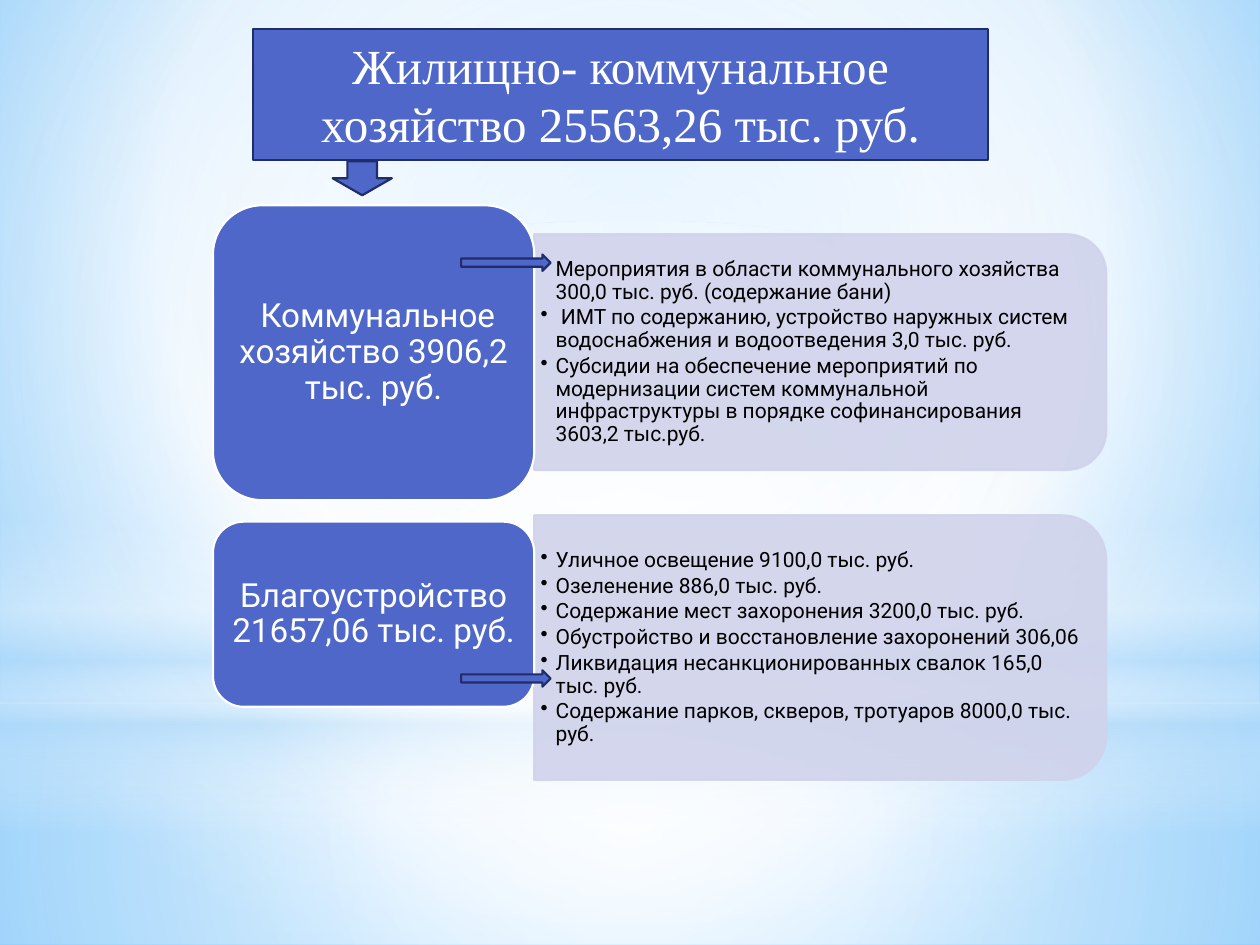
from dataclasses import dataclass

from pptx import Presentation
from pptx.dml.color import RGBColor
from pptx.enum.shapes import MSO_SHAPE
from pptx.enum.text import MSO_ANCHOR, PP_ALIGN
from pptx.oxml import parse_xml
from pptx.oxml.ns import nsdecls, qn
from pptx.util import Inches, Pt

RECT, OVAL = MSO_SHAPE.RECTANGLE, MSO_SHAPE.OVAL
ROUND, HALF = MSO_SHAPE.ROUNDED_RECTANGLE, MSO_SHAPE.ROUND_2_SAME_RECTANGLE
RIGHT, DOWN = MSO_SHAPE.RIGHT_ARROW, MSO_SHAPE.DOWN_ARROW
CENTER, LEFT = PP_ALIGN.CENTER, PP_ALIGN.LEFT
MIDDLE = MSO_ANCHOR.MIDDLE

BLUE = RGBColor(0x4E, 0x67, 0xC8)
NAVY = RGBColor(0x1F, 0x2E, 0x69)
LILAC = RGBColor(0xD0, 0xD3, 0xEB)
WHITE = RGBColor(0xFF, 0xFF, 0xFF)
BLACK = RGBColor(0, 0, 0)
SKY = RGBColor(0xB4, 0xDC, 0xFA)
PALE = RGBColor(0x9E, 0xD5, 0xFF)
DEEP = RGBColor(0x5B, 0xB9, 0xFF)

CARD_X, CARD_W = 1.69, 2.55
PANEL_X, PANEL_W = CARD_X + CARD_W, 4.54
CORNER = 0.0488  # text inset of a rounded corner, as a share of height
MID = (50, 50, 50, 50)


@dataclass
class Glow:
    kind: int
    top: float
    height: float
    stops: list  # (position %, colour, opacity %)
    focus: tuple | None = MID


@dataclass
class Group:
    name: str
    card_y: float
    card_h: float
    panel_y: float
    panel_h: float
    items: list[str]


GLOWS = [
    Glow(RECT, 5.58, 1.92, [(0, WHITE, 91), (37, WHITE, 76), (100, SKY, 79)]),
    Glow(RECT, 0, 5.58, [(0, WHITE, 89), (48, WHITE, 62), (100, SKY, 79)]),
    Glow(RECT, 4.12, 2.5, [(0, WHITE, 0), (29, WHITE, 30), (45, SKY, 40),
                           (55, WHITE, 26), (65, SKY, 60), (100, WHITE, 0)], None),
    Glow(OVAL, 1.75, 5.58, [(0, WHITE, 100), (56, WHITE, 0)]),
]

GROUPS = [
    Group(" Коммунальное хозяйство 3906,2 тыс. руб.", 1.63, 2.34, 1.86, 1.87, [
        "Мероприятия в области коммунального хозяйства 300,0 тыс. руб. (содержание бани)",
        " ИМТ по содержанию, устройство наружных систем водоснабжения и водоотведения 3,0 тыс. руб.",
        "Субсидии на обеспечение мероприятий по модернизации систем коммунальной "
        "инфраструктуры в порядке софинансирования 3603,2 тыс.руб.",
    ]),
    Group("Благоустройство 21657,06 тыс. руб.", 4.14, 1.47, 4.09, 2.1, [
        "Уличное освещение 9100,0 тыс. руб.",
        "Озеленение 886,0 тыс. руб.",
        "Содержание мест захоронения 3200,0 тыс. руб.",
        "Обустройство и восстановление захоронений 306,06",
        "Ликвидация несанкционированных свалок 165,0 тыс. руб.",
        "Содержание парков, скверов, тротуаров 8000,0 тыс. руб.",
    ]),
]

ARROWS = [
    (RIGHT, 3.66, 2.02, 0.71, 0.13),
    (RIGHT, 3.66, 5.32, 0.71, 0.13),
    (DOWN, 2.64, 1.28, 0.47, 0.27),
]


def blend(fill, owner, stops: list, focus: tuple | None) -> None:
    """Fill with a gradient: round about focus, or top to bottom without one."""
    marks = "".join(
        f'<a:gs pos="{pos * 1000}"><a:srgbClr val="{color}">'
        f'<a:alpha val="{alpha * 1000}"/></a:srgbClr></a:gs>'
        for pos, color, alpha in stops)
    if focus:
        sides = " ".join(f'{side}="{part * 1000}"' for side, part in zip("ltrb", focus))
        way = f'<a:path path="circle"><a:fillToRect {sides}/></a:path>'
    else:
        way = '<a:lin ang="5400000" scaled="0"/>'
    fill.solid()
    old = owner.find(qn("a:solidFill"))
    owner.replace(old, parse_xml(
        f'<a:gradFill {nsdecls("a")} rotWithShape="1"><a:gsLst>{marks}</a:gsLst>{way}</a:gradFill>'))


def add_form(slide, kind: int, x: float, y: float, w: float, h: float,
             color: RGBColor | None = None, edge: RGBColor | None = None):
    form = slide.shapes.add_shape(kind, Inches(x), Inches(y), Inches(w), Inches(h))
    form.shadow.inherit = False
    if color is not None:
        form.fill.solid()
        form.fill.fore_color.rgb = color
    if edge is None:
        form.line.fill.background()
    else:
        form.line.color.rgb = edge
        form.line.width = Pt(1.25)
    return form


def set_font(para, name: str, size: float, color: RGBColor, align: int) -> None:
    para.alignment = align
    para.font.name, para.font.size = name, Pt(size)
    para.font.color.rgb = color


def add_text(slide, x: float, y: float, w: float, h: float, lines: list[str],
             size: float, color: RGBColor, align: int, pad: float, gap: float) -> list:
    """Add a centred-in-height text box and return its paragraphs."""
    box = slide.shapes.add_textbox(Inches(x), Inches(y), Inches(w), Inches(h))
    frame = box.text_frame
    frame.word_wrap = True
    frame.vertical_anchor = MIDDLE
    frame.margin_left = frame.margin_right = Inches(pad)
    frame.margin_top = frame.margin_bottom = Inches(pad / 2)
    frame.text = "\n".join(lines)
    for para in frame.paragraphs:
        set_font(para, "Roboto", size, color, align)
        para.line_spacing = 0.9
        para.space_after = Pt(size * gap)
    return list(frame.paragraphs)


def add_bullet(para) -> None:
    para.level = 1
    props = para._p.get_or_add_pPr()
    props.set("marL", str(Inches(0.12)))
    props.set("indent", str(Inches(-0.12)))
    props.append(parse_xml(f'<a:buChar {nsdecls("a")} char="•"/>'))


def add_panel(slide, group: Group) -> None:
    """Draw the panel turned a quarter, so its round corners face right."""
    h = group.panel_h
    shift = (PANEL_W - h) / 2
    panel = add_form(slide, HALF, PANEL_X + shift, group.panel_y - shift,
                     h, PANEL_W, LILAC, LILAC)
    panel.rotation = 90
    for color in panel._element.spPr.iter(qn("a:srgbClr")):
        color.append(parse_xml(f'<a:alpha {nsdecls("a")} val="90000"/>'))
    pad = h * CORNER
    for para in add_text(slide, PANEL_X, group.panel_y + pad, PANEL_W - pad, h - 2 * pad,
                         group.items, 12, BLACK, LEFT, 0.05, 0.15):
        add_bullet(para)


def add_card(slide, group: Group) -> None:
    y, h = group.card_y, group.card_h
    add_form(slide, ROUND, CARD_X, y, CARD_W, h, BLUE, WHITE)
    pad = h * CORNER
    add_text(slide, CARD_X + pad, y + pad, CARD_W - 2 * pad, h - 2 * pad,
             [group.name], 19, WHITE, CENTER, 0.08, 0.35)


def main() -> None:
    deck = Presentation()
    deck.slide_width, deck.slide_height = Inches(10), Inches(7.5)
    slide = deck.slides.add_slide(deck.slide_layouts[6])

    back = slide.background.fill
    blend(back, slide.element.find(".//" + qn("p:bgPr")),
          [(0, PALE, 100), (60, WHITE, 100), (100, DEEP, 100)], (20, 10, 20, 60))
    for glow in GLOWS:
        form = add_form(slide, glow.kind, 0, glow.top, 10, glow.height)
        blend(form.fill, form._element.spPr, glow.stops, glow.focus)

    title = add_form(slide, RECT, 2.01, 0.23, 5.83, 1.04, BLUE, NAVY)
    title.text_frame.word_wrap = True
    title.text_frame.vertical_anchor = MSO_ANCHOR.TOP
    title.text_frame.text = "Жилищно- коммунальное хозяйство 25563,26 тыс. руб."
    set_font(title.text_frame.paragraphs[0], "Times New Roman", 28, WHITE, CENTER)

    for group in GROUPS:
        add_panel(slide, group)
        add_card(slide, group)
    for arrow in ARROWS:
        add_form(slide, *arrow, BLUE, NAVY)
    deck.save("out.pptx")


if __name__ == "__main__":
    main()
